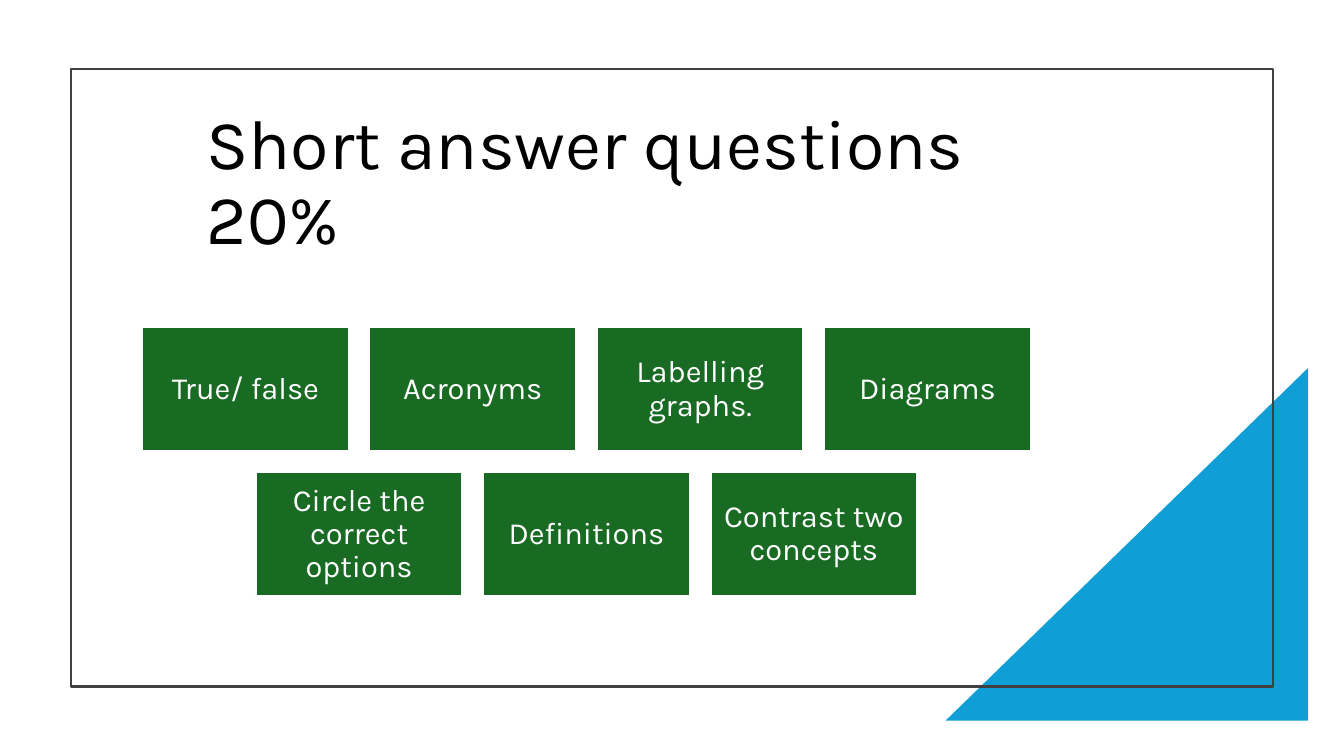
from dataclasses import dataclass

from pptx import Presentation
from pptx import util as u
from pptx.dml.color import RGBColor
from pptx.enum import shapes, text


@dataclass(frozen=True)
class Theme:
    font: str = "Karla"
    title_size: int = 50
    box_size: int = 22
    line_width: float = 1.5
    black: str = "000000"
    white: str = "FFFFFF"
    frame: str = "404040"
    green: str = "196B24"
    blue: str = "0F9ED5"


class SlideBuilder:
    def __init__(self, presentation, theme):
        self.theme = theme
        self.slide = presentation.slides.add_slide(presentation.slide_layouts[5])

    def set_text(self, shape, wording, size, color, alignment):
        frame = shape.text_frame
        frame.text = wording
        frame.word_wrap = True
        frame.auto_size = text.MSO_AUTO_SIZE.NONE
        frame.vertical_anchor = text.MSO_ANCHOR.MIDDLE
        paragraph = frame.paragraphs[0]
        paragraph.alignment = alignment
        paragraph.line_spacing = 0.9
        font = paragraph.runs[0].font
        font.name = self.theme.font
        font.size = u.Pt(size)
        font.color.rgb = RGBColor.from_string(color)

    def title(self, wording, left, top, width, height):
        title = self.slide.shapes.title
        title.left, title.top = u.Cm(left), u.Cm(top)
        title.width, title.height = u.Cm(width), u.Cm(height)
        self.set_text(title, wording, self.theme.title_size, self.theme.black,
                      text.PP_ALIGN.LEFT)

    def shape(self, kind, left, top, width, height, fill=None, line=None):
        shape = self.slide.shapes.add_shape(
            kind, u.Cm(left), u.Cm(top), u.Cm(width), u.Cm(height))
        shape.shadow.inherit = False
        if fill:
            shape.fill.solid()
            shape.fill.fore_color.rgb = RGBColor.from_string(fill)
        else:
            shape.fill.background()
        if line:
            shape.line.color.rgb = RGBColor.from_string(line)
            shape.line.width = u.Pt(self.theme.line_width)
        else:
            shape.line.fill.background()
        return shape

    def corner_triangle(self, left, top, width, height):
        """Right triangle with its right angle at the bottom right."""
        triangle = self.shape(shapes.MSO_SHAPE.RIGHT_TRIANGLE, left, top,
                              width, height, fill=self.theme.blue)
        triangle._element.spPr.xfrm.set("flipH", "1")

    def frame(self, left, top, width, height):
        self.shape(shapes.MSO_SHAPE.RECTANGLE, left, top, width, height,
                   line=self.theme.frame)

    def box(self, wording, left, top, width, height):
        box = self.shape(shapes.MSO_SHAPE.RECTANGLE, left, top, width, height,
                         fill=self.theme.green, line=self.theme.white)
        frame = box.text_frame
        frame.margin_left = frame.margin_right = u.Cm(0.23)
        frame.margin_top = frame.margin_bottom = u.Cm(0.23)
        self.set_text(box, wording, self.theme.box_size, self.theme.white,
                      text.PP_ALIGN.CENTER)

    def centred_rows(self, rows, center, top, width, height, gap):
        for row_index, row in enumerate(rows):
            row_width = len(row) * (width + gap) - gap
            for column, wording in enumerate(row):
                self.box(wording,
                         center - row_width / 2 + column * (width + gap),
                         top + row_index * (height + gap), width, height)


QUESTION_TYPES = [
    ["True/ false", "Acronyms", "Labelling graphs.", "Diagrams"],
    ["Circle the correct options", "Definitions", "Contrast two concepts"],
]


def main():
    presentation = Presentation()
    presentation.slide_width = u.Cm(33.87)
    presentation.slide_height = u.Cm(19.05)

    builder = SlideBuilder(presentation, Theme())
    builder.corner_triangle(23.83, 9.27, 9.14, 8.89)
    builder.frame(1.78, 1.73, 30.3, 15.57)
    builder.title("Short answer questions 20%", 4.95, 2.39, 22.43, 4.5)
    builder.centred_rows(QUESTION_TYPES, center=14.78, top=8.25,
                         width=5.21, height=3.13, gap=0.52)

    presentation.save("out.pptx")


if __name__ == "__main__":
    main()
